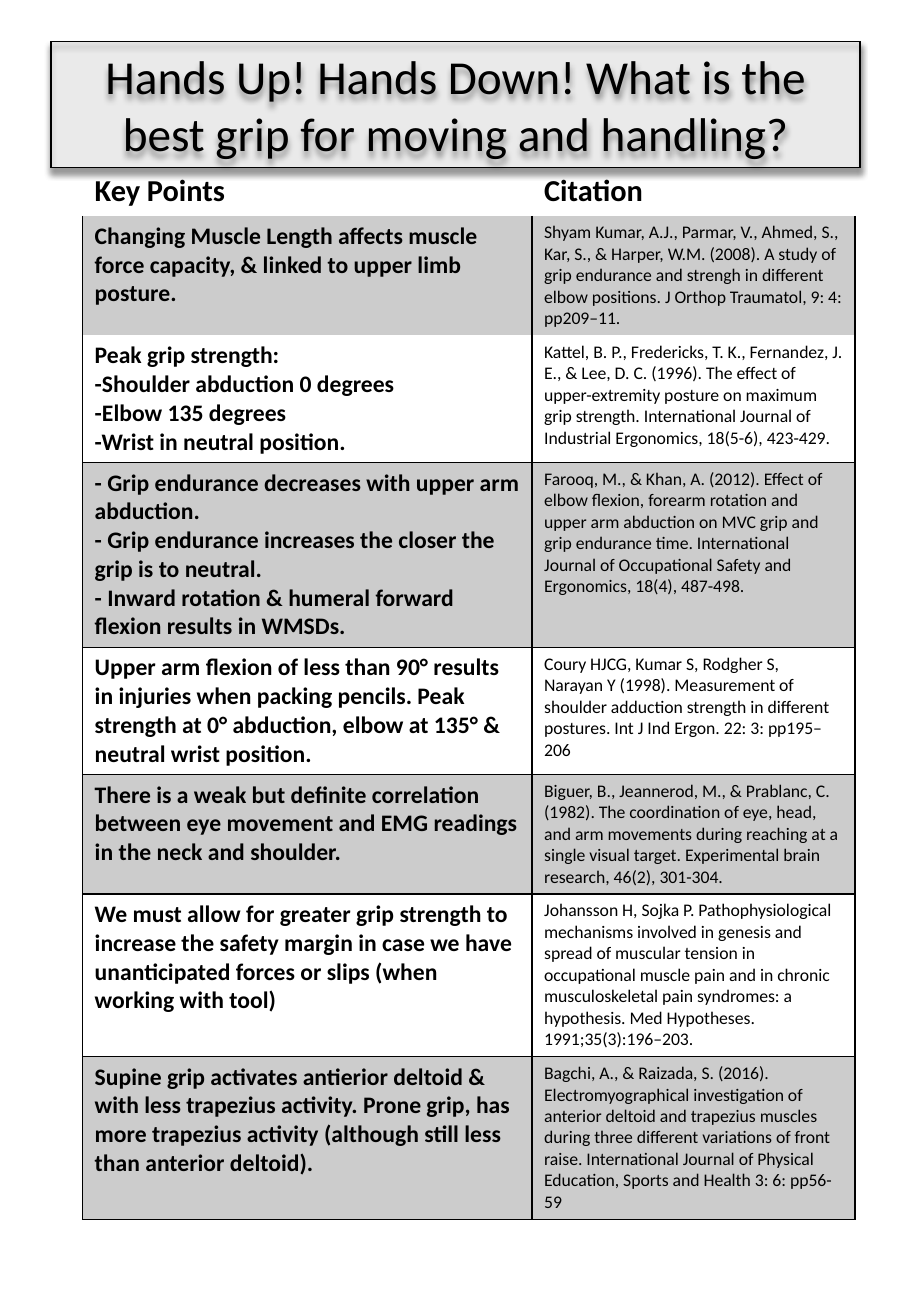
"""Build a one-page poster on grip strength: a title panel and a table of key points with citations."""
from lxml.etree import SubElement
from pptx import Presentation
from pptx.dml.color import RGBColor
from pptx.enum.shapes import MSO_SHAPE
from pptx.enum.text import MSO_ANCHOR, PP_ALIGN
from pptx.oxml.ns import qn
from pptx.util import Inches, Pt

TITLE = "Hands Up! Hands Down! What is the best grip for moving and handling?"
HEADINGS = ("Key Points", "Citation")
FINDINGS = [
    (["Changing Muscle Length affects muscle force capacity, & linked to upper limb posture."],
     ["Shyam Kumar, A.J., Parmar, V., Ahmed, S., Kar, S., & Harper, W.M. (2008). A study of grip "
      "endurance and strengh in different elbow positions. J Orthop Traumatol, 9: 4: pp209–11."]),
    (["Peak grip strength:", "-Shoulder abduction 0 degrees", "-Elbow 135 degrees",
      "-Wrist in neutral position."],
     ["Kattel, B. P., Fredericks, T. K., Fernandez, J. E., & Lee, D. C. (1996). The effect of "
      "upper-extremity posture on maximum grip strength. International Journal of Industrial "
      "Ergonomics, 18(5-6), 423-429."]),
    (["- Grip endurance decreases with upper arm abduction.",
      "- Grip endurance increases the closer the grip is to neutral.",
      "- Inward rotation & humeral forward flexion results in WMSDs."],
     ["Farooq, M., & Khan, A. (2012). Effect of elbow flexion, forearm rotation and upper arm "
      "abduction on MVC grip and grip endurance time. International Journal of Occupational "
      "Safety and Ergonomics, 18(4), 487-498."]),
    (["Upper arm flexion of less than 90° results in injuries when packing pencils. Peak strength "
      "at 0° abduction, elbow at 135° & neutral wrist position."],
     ["Coury HJCG, Kumar S, Rodgher S,",
      "Narayan Y (1998). Measurement of shoulder adduction strength in different postures. "
      "Int J Ind Ergon. 22: 3: pp195–206"]),
    (["There is a weak but definite correlation between eye movement and EMG readings in the neck "
      "and shoulder."],
     ["Biguer, B., Jeannerod, M., & Prablanc, C. (1982). The coordination of eye, head, and arm "
      "movements during reaching at a single visual target. Experimental brain research, 46(2), "
      "301-304."]),
    (["We must allow for greater grip strength to increase the safety margin in case we have "
      "unanticipated forces or slips (when working with tool)"],
     ["Johansson H, Sojka P. Pathophysiological mechanisms involved in genesis and spread of "
      "muscular tension in occupational muscle pain and in chronic musculoskeletal pain "
      "syndromes: a hypothesis. Med Hypotheses. 1991;35(3):196–203."]),
    (["Supine grip activates antierior deltoid & with less trapezius activity. Prone grip, has "
      "more trapezius activity (although still less than anterior deltoid)."],
     ["Bagchi, A., & Raizada, S. (2016). Electromyographical investigation of anterior deltoid and "
      "trapezius muscles during three different variations of front raise. International Journal "
      "of Physical Education, Sports and Health 3: 6: pp56-59"]),
]
COLORS = {"ink": "000000", "panel": "EAEAEA", "band": "CCCCCC"}
FONT = "Calibri"
PAGE_SIZE = (7.5, 10.83)
TITLE_AREA = (0.42, 0.34, 6.66, 1.04)
TABLE_CORNER = (0.68, 1.37)
COLUMN_WIDTHS = (3.7, 2.66)
ROW_HEIGHTS = (0.4, 0.97, 1.03, 1.49, 1.03, 0.97, 1.32, 1.32)
FIRST_RULED_ROW = 2


def color(name):
    """Return the named colour."""
    return RGBColor.from_string(COLORS[name])


def write(frame, lines, size, bold=False, align=PP_ALIGN.LEFT):
    """Write each line as a paragraph in the given format."""
    frame.word_wrap = True
    for index, line in enumerate(lines):
        para = frame.add_paragraph() if index else frame.paragraphs[0]
        para.alignment = align
        span = para.add_run()
        span.text = line
        span.font.name, span.font.size, span.font.bold = FONT, Pt(size), bold
        span.font.color.rgb = color("ink")


def add_panel(page):
    """Add an outlined rectangle with a soft shadow below it."""
    box = page.shapes.add_shape(MSO_SHAPE.RECTANGLE, *map(Inches, TITLE_AREA))
    box.line.color.rgb = color("ink")
    box.line.width = Pt(0.75)
    box.shadow.inherit = False
    effects = box._element.spPr.find(qn("a:effectLst"))
    shadow = SubElement(effects, qn("a:outerShdw"), blurRad=str(Pt(4)), dist=str(Pt(3)),
                        dir="5400000", rotWithShape="0")
    tint = SubElement(shadow, qn("a:srgbClr"), val=COLORS["ink"])
    SubElement(tint, qn("a:alpha"), val="40000")
    return box


def set_borders(cell, **sides):
    """Draw or clear the cell border on each side."""
    properties = cell._tc.get_or_add_tcPr()
    for side, shown in sides.items():
        border = SubElement(properties, qn(f"a:ln{side}"), w=str(Pt(1)))
        if shown:
            fill = SubElement(border, qn("a:solidFill"))
            SubElement(fill, qn("a:srgbClr"), val=COLORS["ink"])
        else:
            SubElement(border, qn("a:noFill"))


def add_title(page):
    """Add the grey panel and the shadowed title on it."""
    panel = add_panel(page)
    panel.fill.solid()
    panel.fill.fore_color.rgb = color("panel")
    title = add_panel(page)
    title.fill.background()
    title.text_frame.vertical_anchor = MSO_ANCHOR.TOP
    write(title.text_frame, [TITLE], size=28, align=PP_ALIGN.CENTER)


def add_findings(page):
    """Add the table of key points and citations."""
    rows = [tuple([heading] for heading in HEADINGS)] + FINDINGS
    area = (*TABLE_CORNER, sum(COLUMN_WIDTHS), sum(ROW_HEIGHTS))
    table = page.shapes.add_table(len(rows), len(HEADINGS), *map(Inches, area)).table
    table.first_row = table.horz_banding = False
    for column, width in zip(table.columns, COLUMN_WIDTHS):
        column.width = Inches(width)
    for number, (row, height, texts) in enumerate(zip(table.rows, ROW_HEIGHTS, rows)):
        row.height = Inches(height)
        header = number == 0
        for place, (cell, lines) in enumerate(zip(row.cells, texts)):
            set_borders(cell, L=not header, R=not header,
                        T=number > FIRST_RULED_ROW, B=number >= FIRST_RULED_ROW)
            if number % 2:
                cell.fill.solid()
                cell.fill.fore_color.rgb = color("band")
            else:
                cell.fill.background()
            cell.vertical_anchor = MSO_ANCHOR.BOTTOM if header else MSO_ANCHOR.TOP
            write(cell.text_frame, lines, size=18 if header else (14, 10.5)[place],
                  bold=header or place == 0)


def main():
    """Build and save the poster."""
    deck = Presentation()
    deck.slide_width, deck.slide_height = map(Inches, PAGE_SIZE)
    page = deck.slides.add_slide(deck.slide_layouts[6])
    add_title(page)
    add_findings(page)
    deck.save("out.pptx")


if __name__ == "__main__":
    main()
